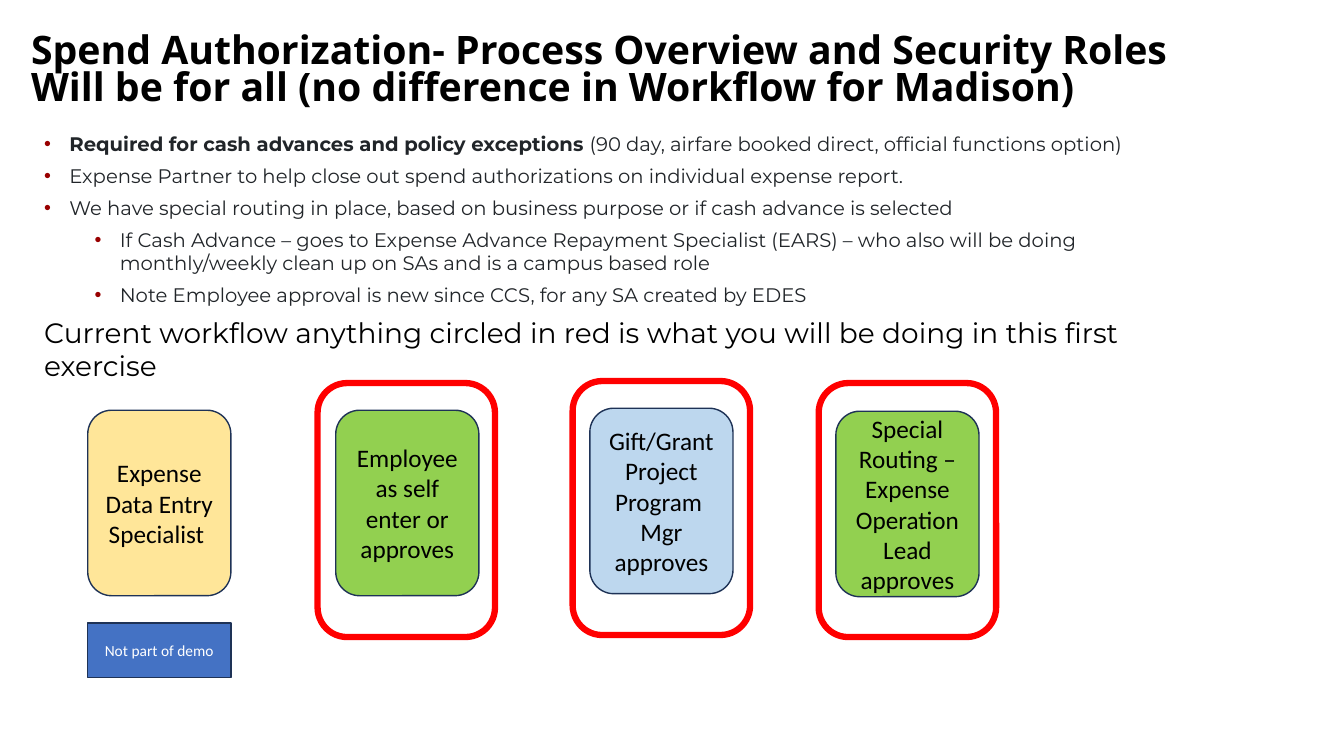
from dataclasses import dataclass

from lxml.etree import SubElement
from pptx import Presentation
from pptx.dml.color import RGBColor
from pptx.enum.shapes import MSO_SHAPE
from pptx.enum.text import MSO_ANCHOR, PP_ALIGN
from pptx.oxml.ns import qn
from pptx.util import Inches, Pt


@dataclass(frozen=True)
class Theme:
    title_font: str = "Noto Sans"
    body_font: str = "Montserrat"
    box_font: str = "Calibri"
    black: str = "000000"
    white: str = "FFFFFF"
    body: str = "212529"
    bullet: str = "990000"
    outline: str = "1E3256"
    red: str = "FF0000"
    yellow: str = "FFE699"
    green: str = "92D050"
    pale_blue: str = "BDD7EE"
    blue: str = "4472C4"
    title_size: int = 28
    closing_size: int = 20
    box_size: int = 18
    body_size: int = 14
    note_size: int = 11


THEME = Theme()
BOX_SIZE = (1.42, 1.84)
RING_SIZE = (1.76, 2.52)

TITLE = ("Spend Authorization- Process Overview and Security Roles \v"
         "Will be for all (no difference in Workflow for Madison)")

# (indent level, [(text, bold), ...])
BULLETS = [
    (0, [("Required for cash advances and policy exceptions ", True),
         ("(90 day, airfare booked direct, official functions option)", False)]),
    (0, [("Expense Partner to help close out spend authorizations on "
          "individual expense report.", False)]),
    (0, [("We have special routing in place, based on business purpose or "
          "if cash advance is selected", False)]),
    (1, [("If Cash Advance – goes to Expense Advance Repayment Specialist (EARS) – "
          "who also will be doing monthly/weekly clean up on SAs and is a "
          "campus based role", False)]),
    (1, [("Note Employee approval is new since CCS, for any SA created by EDES", False)]),
]
CLOSING = ("Current workflow anything circled in red is what you will be doing "
           "in this first exercise")

# (left, top, fill, paragraphs)
STEPS = [
    (0.87, 4.07, THEME.yellow, ["Expense Data Entry Specialist "]),
    (3.33, 4.07, THEME.green, ["Employee as self enter or approves"]),
    (5.85, 4.05, THEME.pale_blue,
     ["Gift/Grant", "Project Program ", "Mgr", "approves"]),
    (8.29, 4.08, THEME.green,
     ["Special Routing – Expense Operation Lead", "approves"]),
]
RINGS = [(3.15, 3.8), (8.12, 3.8), (5.68, 3.78)]


def set_font(font, name, size, color, bold=False):
    values = {"name": name, "size": Pt(size), "bold": bold}
    for key, value in values.items():
        setattr(font, key, value)
    font.color.rgb = RGBColor.from_string(color)


def set_bullet(p, level):
    pPr = p._p.get_or_add_pPr()
    pPr.set("marL", str(Inches(0.25 + 0.5 * level)))
    pPr.set("indent", str(Inches(-0.25)))
    color = SubElement(pPr, qn("a:buClr"))
    SubElement(color, qn("a:srgbClr"), val=THEME.bullet)
    SubElement(pPr, qn("a:buFont"), typeface="Arial")
    SubElement(pPr, qn("a:buChar"), char="•")
    p.level = level


def add_text_frame(s, left, top, width, height, anchor=MSO_ANCHOR.TOP):
    box = s.shapes.add_textbox(*map(Inches, (left, top, width, height)))
    tf = box.text_frame
    tf.word_wrap = True
    tf.vertical_anchor = anchor
    return tf


def add_title(s):
    p = add_text_frame(s, 0.21, 0.3, 13.12, 0.83, MSO_ANCHOR.MIDDLE).paragraphs[0]
    p.text = TITLE
    p.line_spacing = 0.79
    for r in p.runs:
        set_font(r.font, THEME.title_font, THEME.title_size, THEME.black, True)


def add_body(s):
    tf = add_text_frame(s, 0.34, 1.26, 11.66, 4.79)
    for i, (level, runs) in enumerate(BULLETS):
        p = tf.add_paragraph() if i else tf.paragraphs[0]
        p.space_before = Pt(6 if i else 0)
        set_bullet(p, level)
        for text, bold in runs:
            r = p.add_run()
            r.text = text
            set_font(r.font, THEME.body_font, THEME.body_size, THEME.body, bold)
    p = tf.add_paragraph()
    p.space_before = Pt(6)
    r = p.add_run()
    r.text = CLOSING
    set_font(r.font, THEME.body_font, THEME.closing_size, THEME.black)


def add_outlined(s, kind, place, line_color, line_width, fill=None):
    sp = s.shapes.add_shape(kind, *map(Inches, place))
    sp.shadow.inherit = False
    if fill:
        sp.fill.solid()
        sp.fill.fore_color.rgb = RGBColor.from_string(fill)
    else:
        sp.fill.background()
    sp.line.color.rgb = RGBColor.from_string(line_color)
    sp.line.width = Pt(line_width)
    return sp


def add_box(s, kind, place, fill, paragraphs, size, color):
    sp = add_outlined(s, kind, place, THEME.outline, 1, fill)
    tf = sp.text_frame
    tf.word_wrap = True
    tf.vertical_anchor = MSO_ANCHOR.MIDDLE
    for i, text in enumerate(paragraphs):
        p = tf.add_paragraph() if i else tf.paragraphs[0]
        p.alignment = PP_ALIGN.CENTER
        r = p.add_run()
        r.text = text
        set_font(r.font, THEME.box_font, size, color)


def main():
    prs = Presentation()
    prs.slide_width, prs.slide_height = Inches(13.33), Inches(7.5)
    s = prs.slides.add_slide(prs.slide_layouts[6])
    add_body(s)
    add_title(s)
    for left, top, fill, paragraphs in STEPS:
        add_box(s, MSO_SHAPE.ROUNDED_RECTANGLE, (left, top, *BOX_SIZE), fill,
                paragraphs, THEME.box_size, THEME.black)
    add_box(s, MSO_SHAPE.RECTANGLE, (0.87, 6.18, 1.42, 0.54), THEME.blue,
            ["Not part of demo"], THEME.note_size, THEME.white)
    for left, top in RINGS:
        add_outlined(s, MSO_SHAPE.ROUNDED_RECTANGLE, (left, top, *RING_SIZE),
                     THEME.red, 4.5)
    prs.save("out.pptx")


if __name__ == "__main__":
    main()
